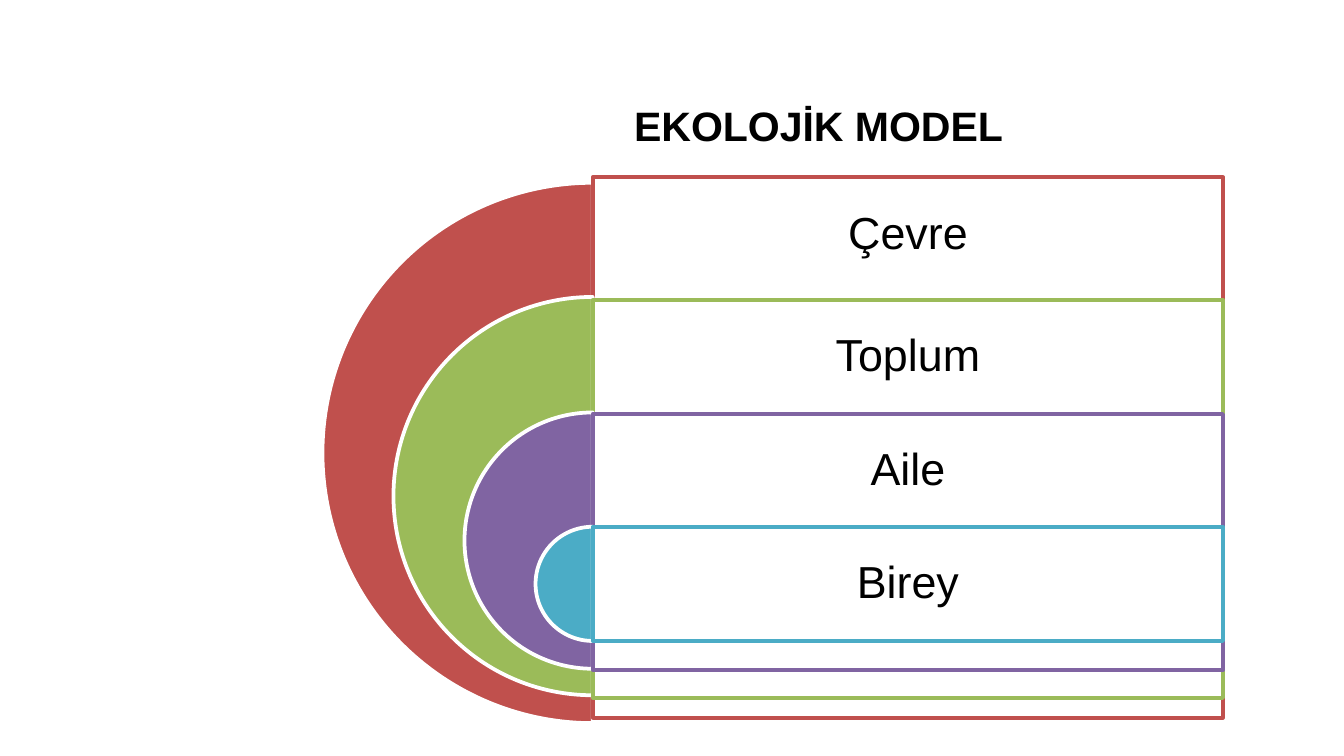
from dataclasses import dataclass

from lxml import etree
from pptx import Presentation
from pptx import util as u
from pptx.dml.color import RGBColor
from pptx.enum import shapes, text
from pptx.oxml.ns import qn


@dataclass(frozen=True)
class Theme:
    font: str = "Arial"
    ink: str = "000000"
    paper: str = "FFFFFF"
    rings: tuple = ("C0504D", "9BBB59", "8064A2", "4BACC6")
    title: float = 22
    label: float = 24
    line: float = 2
    panel_alpha: int = 90


def apply(obj, values):
    for name, value in values.items():
        setattr(obj, name, value)


class Painter:
    def __init__(self, slide, theme):
        self.slide = slide
        self.theme = theme

    def shape(self, kind, box, fill, line):
        sp = self.slide.shapes.add_shape(kind, *map(u.Pt, box))
        sp.shadow.inherit = False
        sp.fill.solid()
        sp.fill.fore_color.rgb = RGBColor.from_string(fill)
        sp.line.color.rgb = RGBColor.from_string(line)
        sp.line.width = u.Pt(self.theme.line)
        return sp

    def half_disc(self, center_x, top, size, color):
        """Draw the left half of a disc, its flat side on center_x."""
        box = (center_x - size / 2, top, size, size)
        sp = self.shape(shapes.MSO_SHAPE.PIE, box, color, self.theme.paper)
        sp.adjustments[0] = 54
        sp.adjustments[1] = 162

    def panel(self, box, color):
        """Draw a slightly see-through rectangle with a coloured outline."""
        sp = self.shape(shapes.MSO_SHAPE.RECTANGLE, box, self.theme.paper, color)
        clr = sp._element.spPr.find(qn("a:solidFill"))[0]
        alpha = etree.SubElement(clr, qn("a:alpha"))
        alpha.set("val", str(self.theme.panel_alpha * 1000))

    def text(self, box, words, frame, paragraph, font):
        tf = self.slide.shapes.add_textbox(*map(u.Pt, box)).text_frame
        apply(tf, frame)
        p = tf.paragraphs[0]
        apply(p, {"alignment": text.PP_ALIGN.CENTER, **paragraph})
        r = p.add_run()
        r.text = words
        apply(r.font, {"name": self.theme.font, **font})
        r.font.color.rgb = RGBColor.from_string(self.theme.ink)

    def title(self, box, words):
        self.text(
            box, words,
            {"word_wrap": False, "auto_size": text.MSO_AUTO_SIZE.SHAPE_TO_FIT_TEXT},
            {"line_spacing": u.Pt(112.2)},
            {"size": u.Pt(self.theme.title), "bold": True},
        )

    def label(self, box, words):
        sides = ("left", "top", "right", "bottom")
        frame = {f"margin_{side}": u.Pt(7.2) for side in sides}
        frame.update(word_wrap=True, vertical_anchor=text.MSO_ANCHOR.MIDDLE)
        self.text(box, words, frame, {"line_spacing": 0.9},
                  {"size": u.Pt(self.theme.label)})


def main():
    prs = Presentation()
    prs.slide_width, prs.slide_height = u.Pt(720), u.Pt(405)
    theme = Theme()
    painter = Painter(prs.slides.add_slide(prs.slide_layouts[6]), theme)

    painter.title((331.2, -35.3, 214.6, 97.2), "EKOLOJİK MODEL")

    axis, width = 317.5, 337.7
    inner, growth = 61.2, 76.1
    # Level name, top of its half disc, top of its panel
    levels = [
        ("Çevre", 97.9, 95),
        ("Toplum", 159.1, 160.6),
        ("Aile", 221, 221.8),
        ("Birey", 282.2, 282.2),
    ]
    for i, ((name, disc_top, panel_top), color) in enumerate(zip(levels, theme.rings)):
        size = inner + growth * (len(levels) - 1 - i)
        painter.half_disc(axis, disc_top, size, color)
        painter.panel((axis, panel_top, width, size), color)
        painter.label((axis, panel_top, width, inner), name)

    prs.save("out.pptx")


if __name__ == "__main__":
    main()
